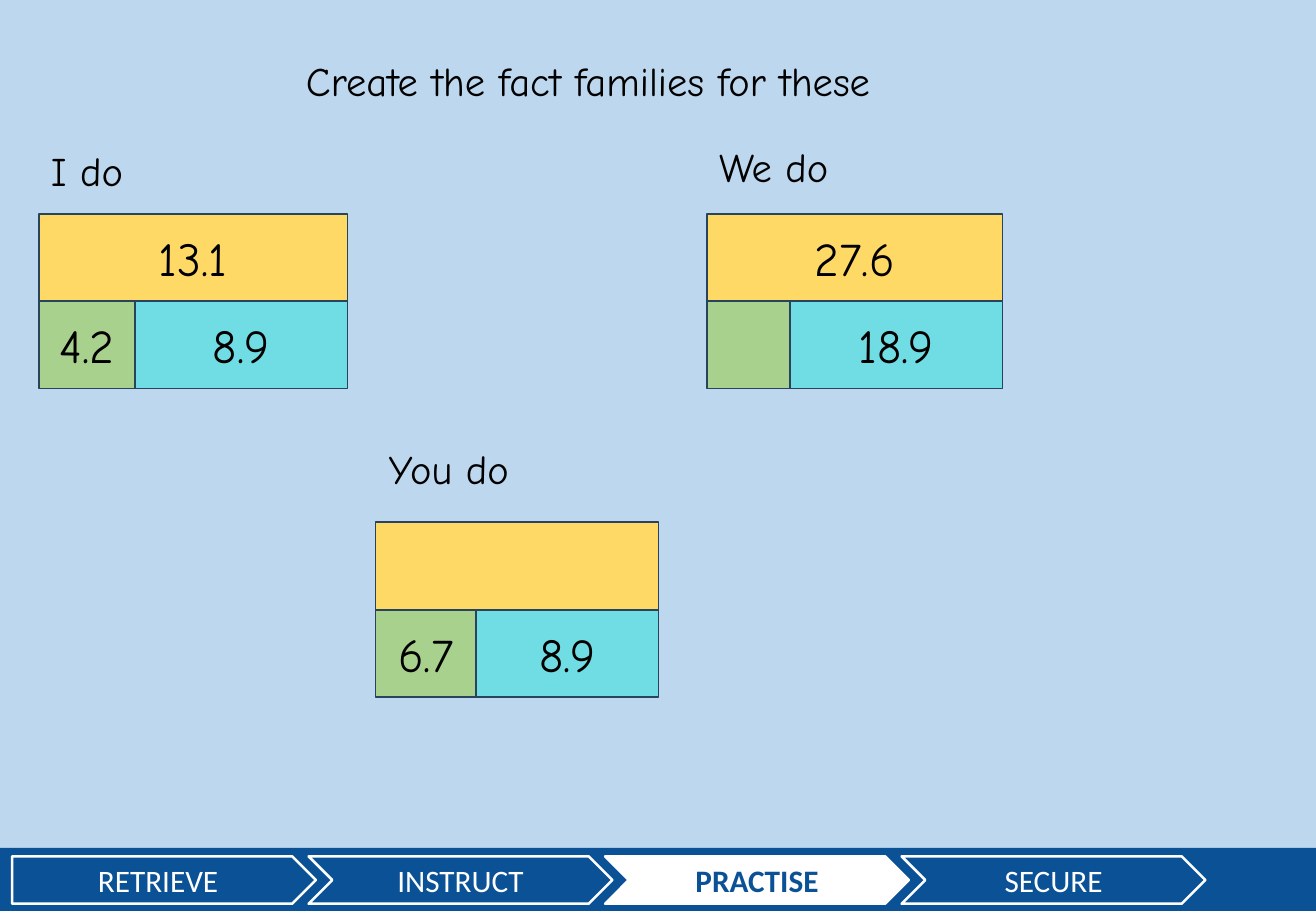
from pptx import Presentation
from pptx.dml.color import RGBColor as RGB
from pptx.enum.shapes import MSO_SHAPE as Shape
from pptx.enum.text import MSO_ANCHOR as Anchor, PP_ALIGN as Align
from pptx.util import Pt

SKY = RGB(0xBD, 0xD7, 0xEE)
BLUE = RGB(0x0B, 0x51, 0x96)
WHITE = RGB(0xFF, 0xFF, 0xFF)
BLACK = RGB(0, 0, 0)
EDGE = RGB(0x28, 0x44, 0x5D)
GOLD = RGB(0xFF, 0xD9, 0x66)
GREEN = RGB(0xA9, 0xD1, 0x8E)
AQUA = RGB(0x6F, 0xDD, 0xE3)

STEPS = ["RETRIEVE", "INSTRUCT", "PRACTISE", "SECURE"]
ACTIVE = "PRACTISE"
TITLE = ("Create the fact families for these", 242, 41, 560)
MODELS = [
    {"label": ("I do", 32, 115, 86), "at": (32, 176), "parts": (79, 175),
     "values": ("13.1", "4.2", "8.9")},
    {"label": ("We do", 582, 112, 121), "at": (582, 176), "parts": (68, 175),
     "values": ("27.6", "", "18.9")},
    {"label": ("You do", 310, 361, 124), "at": (309, 430), "parts": (83, 150),
     "values": ("", "6.7", "8.9")},
]

PX = 9144
WIDE, HIGH = 1083, 750
ROW = 72
PITCH = 244

deck = Presentation()
deck.slide_width, deck.slide_height = WIDE * PX, HIGH * PX
slide = deck.slides.add_slide(deck.slide_layouts[6])
slide.background.fill.solid()
slide.background.fill.fore_color.rgb = SKY


def write(shape, text, size=28, font="Comic Neue", color=BLACK,
          bold=False, align=Align.CENTER, anchor=Anchor.MIDDLE):
    frame = shape.text_frame
    frame.word_wrap = True
    frame.vertical_anchor = anchor
    para = frame.paragraphs[0]
    para.alignment = align
    run = para.add_run()
    run.text = text
    run.font.size = Pt(size)
    run.font.name = font
    run.font.bold = bold
    run.font.color.rgb = color


def block(kind, x, y, w, h, fill, line=None, weight=1):
    shape = slide.shapes.add_shape(kind, x * PX, y * PX, w * PX, h * PX)
    shape.shadow.inherit = False
    shape.fill.solid()
    shape.fill.fore_color.rgb = fill
    if line is None:
        shape.line.fill.background()
    else:
        shape.line.color.rgb = line
        shape.line.width = Pt(weight)
    return shape


def label(text, x, y, w):
    box = slide.shapes.add_textbox(x * PX, y * PX, w * PX, 50 * PX)
    write(box, text, size=24, align=Align.LEFT, anchor=Anchor.TOP)


block(Shape.RECTANGLE, 0, 698, WIDE, HIGH - 698, BLUE)
for i, step in enumerate(STEPS):
    live = step == ACTIVE
    kind = Shape.CHEVRON if i else Shape.PENTAGON
    arrow = block(kind, 10 + i * PITCH, 705, 250, 39,
                  WHITE if live else BLUE, WHITE, 1.5)
    write(arrow, step, size=18.5, font="Calibri",
          color=BLUE if live else WHITE, bold=live)

for model in MODELS:
    x, y = model["at"]
    left, right = model["parts"]
    cells = [(x, y, left + right, GOLD),
             (x, y + ROW, left, GREEN),
             (x + left, y + ROW, right, AQUA)]
    for (cx, cy, w, fill), value in zip(cells, model["values"]):
        cell = block(Shape.RECTANGLE, cx, cy, w, ROW, fill, EDGE)
        if value:
            write(cell, value)

for item in [TITLE] + [model["label"] for model in MODELS]:
    label(*item)

deck.save("out.pptx")
